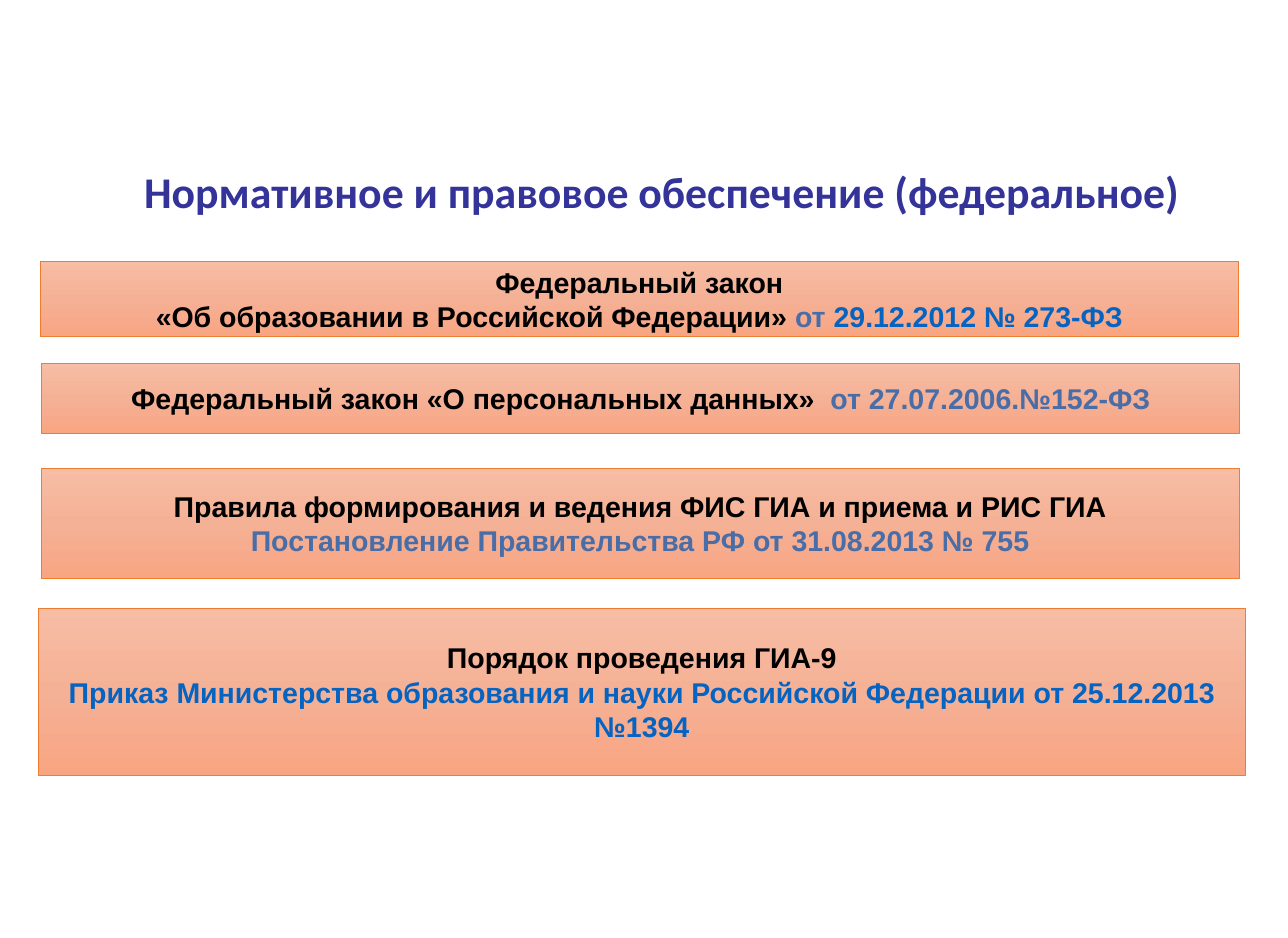
from copy import deepcopy

from pptx import Presentation
from pptx import util as u
from pptx.dml.color import RGBColor
from pptx.enum import shapes, text

COLORS = {
    "title": "333399",
    "black": "000000",
    "slate": "496DA7",
    "blue": "0563C1",
    "border": "ED7D31",
    "top": "F7BDA5",
    "middle": "F5B196",
    "bottom": "F8A582",
}

LAWS = [
    ((39.6, 256.3, 1176.5, 74.2), [
        [("Федеральный закон", "black")],
        [("«Об образовании в Российской Федерации» ", "black"),
         ("от", "slate"),
         (" 29.12.2012 № 273-ФЗ", "blue")],
    ]),
    ((41, 357.1, 1176.5, 68.4), [
        [("Федеральный закон «О персональных данных»  ", "black"),
         ("от 27.07.2006.№152-ФЗ", "slate")],
    ]),
    ((40.3, 459.4, 1176.5, 108.7), [
        [("Правила формирования и ведения ФИС ГИА и приема и РИС ГИА", "black")],
        [("Постановление Правительства РФ от 31.08.2013 № 755", "slate")],
    ]),
    ((37.4, 596.9, 1185.8, 164.2), [
        [("Порядок проведения ГИА-9", "black")],
        [("Приказ Министерства образования и науки Российской Федерации "
          "от 25.12.2013 №1394", "blue")],
    ]),
]


def rgb(name):
    return RGBColor.from_string(COLORS[name])


def add_run(p, content, font, size, color):
    r = p.add_run()
    r.text = content
    r.font.name = font
    r.font.size = u.Pt(size)
    r.font.bold = True
    r.font.color.rgb = rgb(color)


def format_frame(tf):
    tf.word_wrap = True
    tf.auto_size = text.MSO_AUTO_SIZE.NONE
    tf.vertical_anchor = text.MSO_ANCHOR.MIDDLE
    tf.margin_left = tf.margin_right = u.Pt(7.2)
    tf.margin_top = tf.margin_bottom = u.Pt(3.6)


def set_title(s, content):
    sp = s.shapes.title
    sp.left, sp.top, sp.width, sp.height = map(u.Pt, (84.2, 160.6, 1131.1, 60.5))
    format_frame(sp.text_frame)
    p = sp.text_frame.paragraphs[0]
    p.alignment = text.PP_ALIGN.CENTER
    p.line_spacing = 0.9
    add_run(p, content, "Calibri", 43, "title")


def fill_gradient(sp):
    sp.fill.gradient()
    sp.fill.gradient_angle = 270
    gs_list = sp.fill._fill._gradFill.gsLst
    gs_list.insert(1, deepcopy(gs_list[0]))
    stops = zip(sp.fill.gradient_stops, (0, 0.5, 1), ("top", "middle", "bottom"))
    for stop, position, color in stops:
        stop.position = position
        stop.color.rgb = rgb(color)


def add_law(s, box, lines):
    sp = s.shapes.add_shape(shapes.MSO_SHAPE.RECTANGLE, *map(u.Pt, box))
    sp.shadow.inherit = False
    fill_gradient(sp)
    sp.line.color.rgb = rgb("border")
    sp.line.width = u.Pt(0.5)
    tf = sp.text_frame
    format_frame(tf)
    for i, runs in enumerate(lines):
        p = tf.add_paragraph() if i else tf.paragraphs[0]
        p.alignment = text.PP_ALIGN.CENTER
        for content, color in runs:
            add_run(p, content, "Arial", 28, color)


def main():
    prs = Presentation()
    prs.slide_width, prs.slide_height = u.Pt(1265), u.Pt(920.9)
    s = prs.slides.add_slide(prs.slide_layouts[5])
    set_title(s, "Нормативное и правовое обеспечение (федеральное)")
    for box, lines in LAWS:
        add_law(s, box, lines)
    prs.save("out.pptx")


if __name__ == "__main__":
    main()
